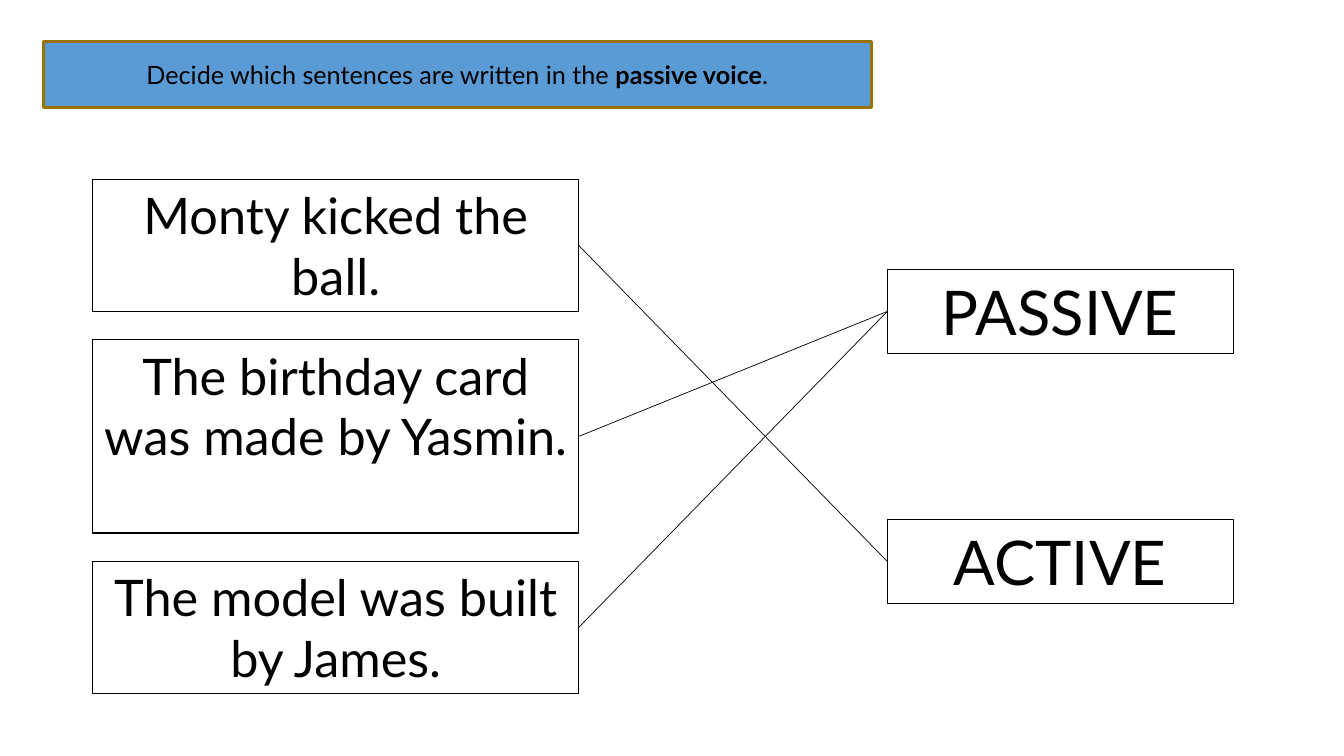
from dataclasses import dataclass
from pptx import Presentation
from pptx.dml.color import RGBColor as RGB
from pptx.enum.shapes import MSO_CONNECTOR as Link, MSO_SHAPE as Shape
from pptx.enum.text import MSO_ANCHOR as Anchor, MSO_AUTO_SIZE as Fit, PP_ALIGN as Align
from pptx.oxml import parse_xml
from pptx.oxml.ns import nsdecls, qn
from pptx.util import Inches, Pt
from lxml.etree import SubElement


@dataclass(frozen=True)
class Theme:
    font: str = "Lato"
    ink: str = "000000"
    paper: str = "FFFFFF"
    blue: str = "5B9BD5"
    gold: str = "997200"
    title: int = 18
    body: int = 36
    label: int = 44


theme = Theme()
WIDE, HIGH = Inches(13.33), Inches(7.5)


def scale(box):
    x, y, w, h = box
    return (round(x * WIDE / 100), round(y * HIGH / 100),
            round(w * WIDE / 100), round(h * HIGH / 100))


def write(shape, *runs, size, anchor=Anchor.TOP):
    frame = shape.text_frame
    frame.word_wrap = True
    frame.auto_size = Fit.NONE
    frame.vertical_anchor = anchor
    frame.margin_left = frame.margin_right = Inches(0.1)
    frame.margin_top = frame.margin_bottom = Inches(0.05)
    para = frame.paragraphs[0]
    para.alignment = Align.CENTER
    for text, bold in runs:
        run = para.add_run()
        run.text = text
        font = run.font
        font.name, font.size, font.bold = theme.font, Pt(size), bold
        font.color.rgb = RGB.from_string(theme.ink)


def paint(shape, fill, line, width):
    if fill:
        shape.fill.solid()
        shape.fill.fore_color.rgb = RGB.from_string(fill)
    else:
        shape.fill.background()
    shape.line.color.rgb = RGB.from_string(line)
    shape.line.width = Pt(width)


def banner(slide, box):
    title = slide.shapes.title
    title.left, title.top, title.width, title.height = scale(box)
    title.element.spPr.insert(1, parse_xml(
        f'<a:prstGeom {nsdecls("a")} prst="roundRect"><a:avLst/></a:prstGeom>'))
    paint(title, theme.blue, theme.gold, 2.25)
    write(title, ("Decide which sentences are written in the ", False),
          ("passive voice", True), (".", False),
          size=theme.title, anchor=Anchor.MIDDLE)


def card(slide, box, text, size, fill, width):
    shape = slide.shapes.add_shape(Shape.RECTANGLE, *scale(box))
    shape.shadow.inherit = False
    paint(shape, fill, theme.ink, width)
    write(shape, (text, False), size=size)
    return shape


def stack(slide, box, items, size, fill, width):
    x, y, w, h = box
    gap = (h - sum(tall for _, tall in items)) / (len(items) - 1)
    cards = []
    for text, tall in items:
        cards.append(card(slide, (x, y, w, tall), text, size, fill, width))
        y += tall + gap
    return cards


def join(slide, start, end):
    line = slide.shapes.add_connector(Link.STRAIGHT, 0, 0, 0, 0)
    line.begin_connect(start, 3)
    line.end_connect(end, 1)
    line.line.color.rgb = RGB.from_string(theme.ink)
    line.line.width = Pt(0.5)
    SubElement(line.element.spPr, qn("a:effectLst"))


def main():
    deck = Presentation()
    deck.slide_width, deck.slide_height = WIDE, HIGH
    slide = deck.slides.add_slide(deck.slide_layouts[5])
    banner(slide, (3.23, 5.47, 61.59, 8.8))
    kick, made, built = stack(
        slide, (6.9, 23.73, 36.16, 68),
        [("Monty kicked the ball.", 17.47),
         ("The birthday card was made by Yasmin.", 25.6),
         ("The model was built by James.", 17.47)],
        theme.body, theme.paper, 1)
    passive, active = stack(
        slide, (66.02, 35.6, 25.73, 44.27),
        [("PASSIVE", 11.2), ("ACTIVE", 11.2)],
        theme.label, None, 0.75)
    for start, end in ((kick, active), (made, passive), (built, passive)):
        join(slide, start, end)
    deck.save("out.pptx")


if __name__ == "__main__":
    main()
